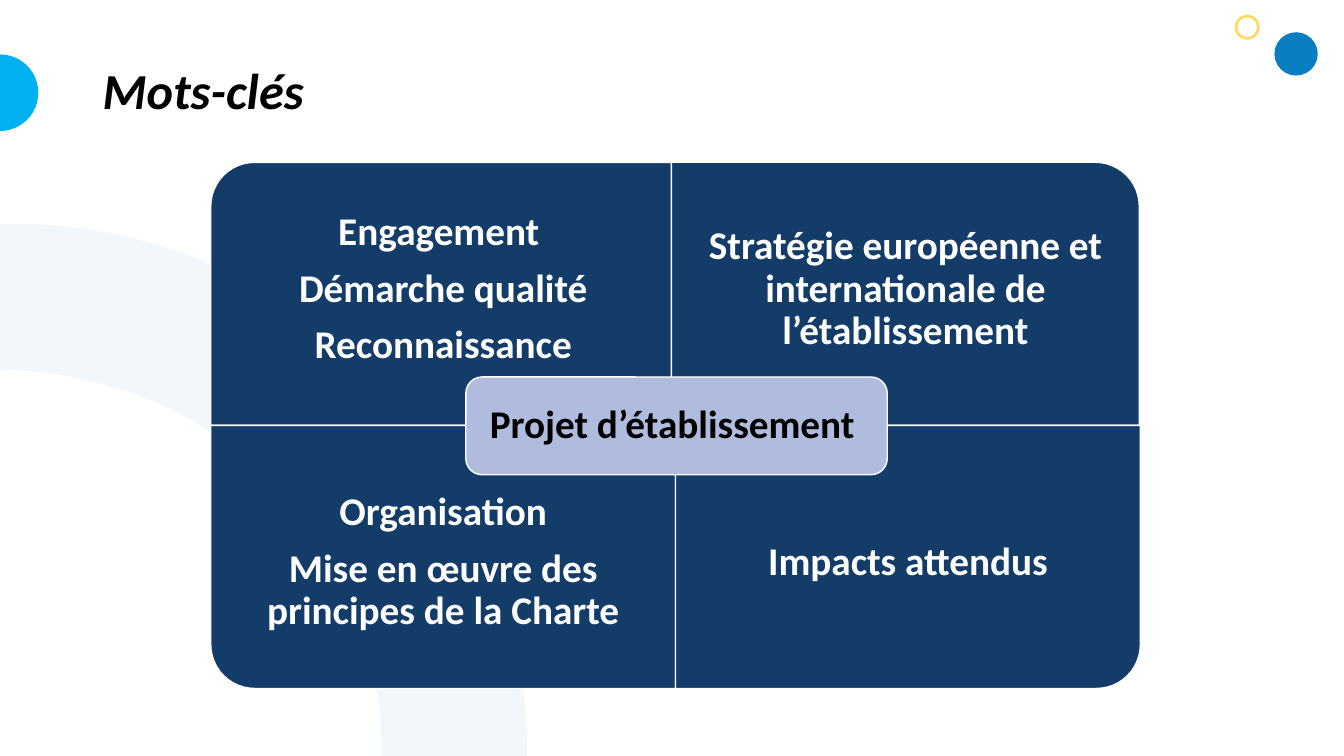
from pptx import Presentation
from pptx.dml.color import RGBColor
from pptx.enum.shapes import MSO_SHAPE as SHAPE
from pptx.enum.text import MSO_ANCHOR as ANCHOR, PP_ALIGN as ALIGN
from pptx.oxml.ns import qn
from pptx.util import Inches, Pt
from lxml.etree import SubElement

TITLE = "Mots-clés"
CENTRE = "Projet d’établissement "
# left, top, width, rotation, text top, paragraphs
QUADRANTS = [
    (2.09, 1.61, 4.61, 270, 1.89, ["Engagement ", "Démarche qualité", "Reconnaissance"]),
    (6.66, 1.61, 4.64, 0, 1.89, ["Stratégie européenne et internationale de l’établissement"]),
    (2.09, 4.22, 4.61, 180, 4.60, ["Organisation", "Mise en œuvre des principes de la Charte"]),
    (6.70, 4.22, 4.61, 90, 4.60, ["Impacts attendus"]),
]
QUAD_H, TEXT_H = 2.61, 1.96

# left, top, diameter, fill, line
CIRCLES = [
    (12.26, 0.16, 0.22, None, "ring"),
    (12.64, 0.32, 0.43, "dot", None),
    (-0.38, 0.54, 0.76, "bullet", None),
]
# each edge of the arc: Bézier start, two controls, end
ARC_OUTER = [(0, 2.22), (2.87, 2.16), (5.22, 4.47), (5.23, 7.5)]
ARC_INNER = [(3.78, 7.5), (3.83, 5.4), (2.2, 3.69), (0, 3.67)]

THEME = {
    "font": "Calibri", "title_pt": 36, "body_pt": 28,
    "quadrant": "143C68", "centre": "B0BCDE", "white": "FFFFFF", "black": "000000",
    "ring": "FFD966", "dot": "097EC2", "bullet": "00B0F0", "arc": "BDD7EE",
}


def color(name):
    return RGBColor.from_string(THEME[name])


def paint(s, fill=None, line=None, width=1):
    s.shadow.inherit = False
    if fill:
        s.fill.solid()
        s.fill.fore_color.rgb = color(fill)
    else:
        s.fill.background()
    if line:
        s.line.color.rgb = color(line)
        s.line.width = Pt(width)
    else:
        s.line.fill.background()


def add_shape(kind, x, y, w, h, **look):
    s = slide.shapes.add_shape(kind, Inches(x), Inches(y), Inches(w), Inches(h))
    paint(s, **look)
    return s


def add_text(x, y, w, h):
    return slide.shapes.add_textbox(Inches(x), Inches(y), Inches(w), Inches(h))


def write(s, paragraphs, ink, size="body_pt", align=ALIGN.CENTER, inset=0.12, italic=False):
    tf = s.text_frame
    frame = {"word_wrap": True, "vertical_anchor": ANCHOR.MIDDLE}
    frame.update({f"margin_{side}": Inches(inset) for side in ("left", "top", "right", "bottom")})
    for name, value in frame.items():
        setattr(tf, name, value)
    for i, text in enumerate(paragraphs):
        p = tf.paragraphs[0] if i == 0 else tf.add_paragraph()
        p.alignment, p.line_spacing = align, 0.9
        if i < len(paragraphs) - 1:
            p.space_after = Pt(9.8)
        r = p.add_run()
        r.text = text
        font = {"name": THEME["font"], "size": Pt(THEME[size]), "bold": True, "italic": italic}
        for name, value in font.items():
            setattr(r.font, name, value)
        r.font.color.rgb = color(ink)


def bezier(a, b, c, d, steps=40):
    """Points along a cubic Bézier curve, in EMU."""
    points = []
    for i in range(steps + 1):
        t = i / steps
        u = 1 - t
        weights = (u**3, 3 * u * u * t, 3 * u * t * t, t**3)
        points.append(tuple(Inches(sum(k * p[axis] for k, p in zip(weights, (a, b, c, d))))
                            for axis in (0, 1)))
    return points


def add_arc():
    points = bezier(*ARC_OUTER) + bezier(*ARC_INNER)
    builder = slide.shapes.build_freeform(*points[0])
    builder.add_line_segments(points[1:], close=True)
    s = builder.convert_to_shape()
    paint(s, fill="arc")
    rgb = s._element.spPr.find(qn("a:solidFill")).find(qn("a:srgbClr"))
    SubElement(rgb, qn("a:alpha")).set("val", "20000")


def add_quadrant(x, y, w, rotation, text_y, paragraphs):
    """A rectangle turned so that its round corner faces outwards, and its text."""
    sw, sh = (QUAD_H, w) if rotation in (90, 270) else (w, QUAD_H)
    s = add_shape(SHAPE.ROUND_1_RECTANGLE, x + (w - sw) / 2, y + (QUAD_H - sh) / 2, sw, sh,
                  fill="quadrant", line="white")
    s.rotation = rotation
    write(add_text(x, text_y, w, TEXT_H), paragraphs, "white", inset=0.22)


prs = Presentation()
prs.slide_width, prs.slide_height = Inches(13.33), Inches(7.5)
slide = prs.slides.add_slide(prs.slide_layouts[6])

add_arc()
for x, y, d, fill, line in CIRCLES:
    add_shape(SHAPE.OVAL, x, y, d, d, fill=fill, line=line, width=2)
for quadrant in QUADRANTS:
    add_quadrant(*quadrant)
label = add_shape(SHAPE.ROUNDED_RECTANGLE, 4.62, 3.74, 4.18, 0.97, fill="centre", line="white")
write(label, [CENTRE], "black")
write(add_text(0.92, 0.2, 11.5, 1.45), [TITLE], "black", size="title_pt",
      align=ALIGN.LEFT, inset=0.1, italic=True)

prs.save("out.pptx")
